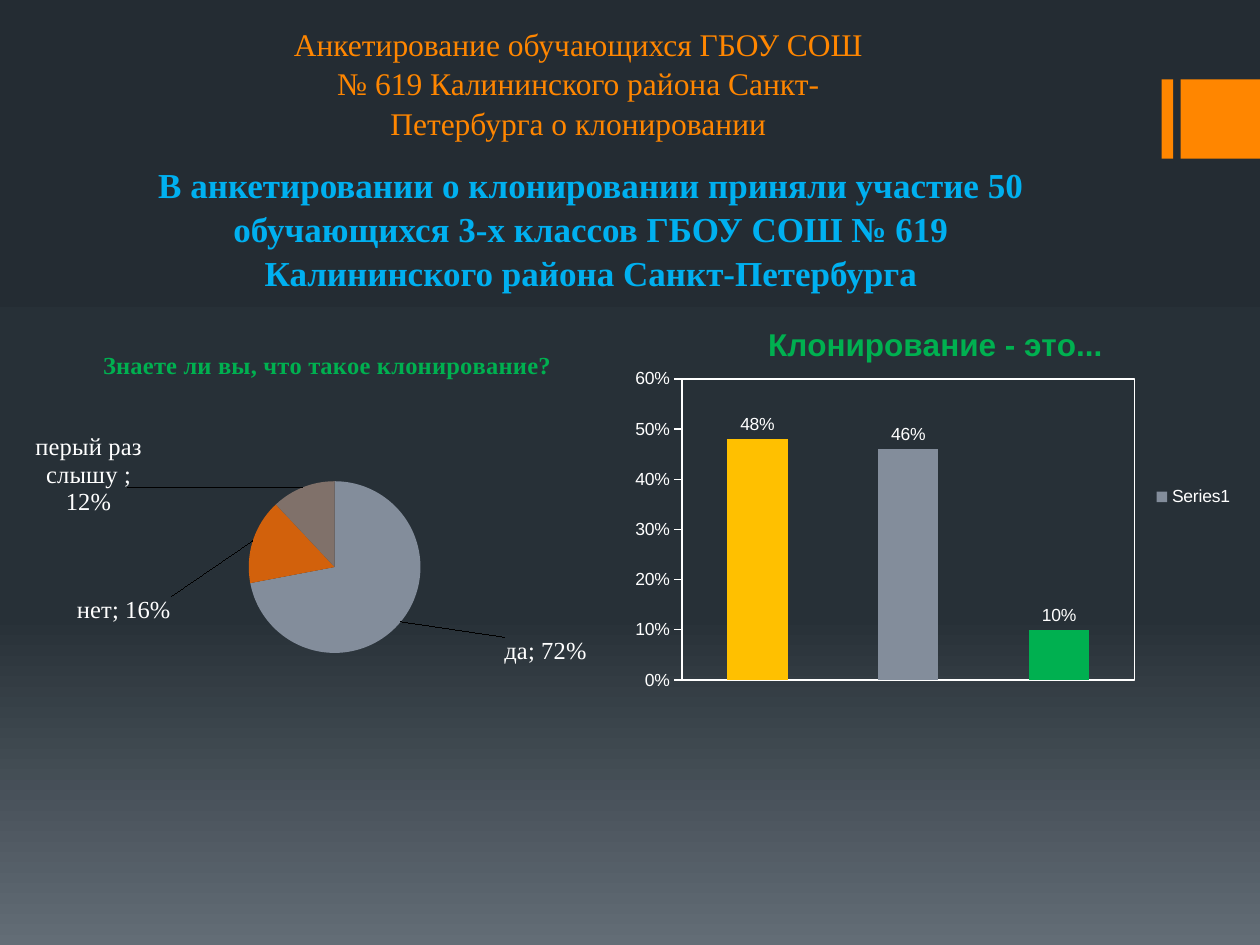
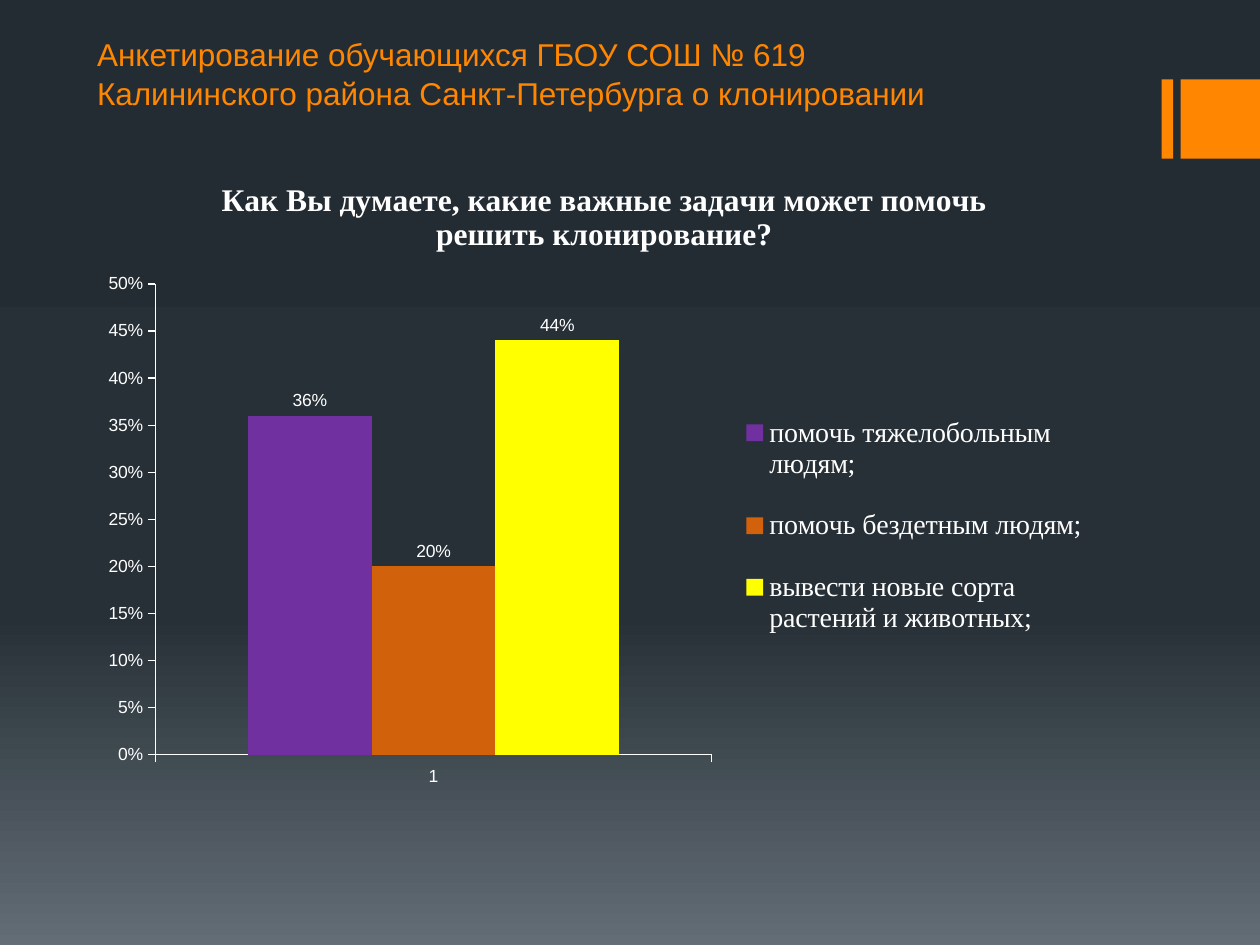
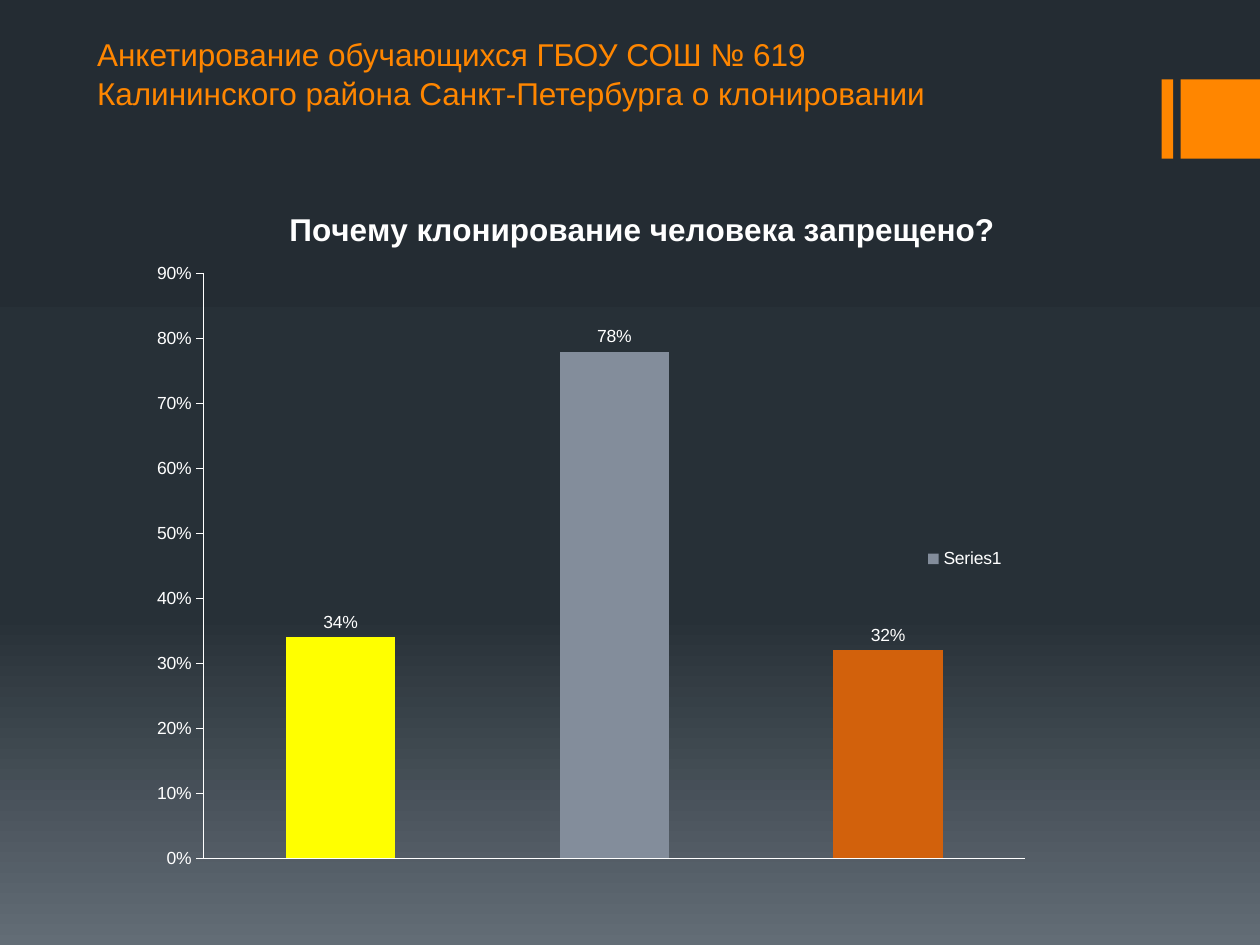
"""Build three slides presenting a school survey about cloning."""
from copy import deepcopy

from pptx import Presentation
from pptx.chart.data import CategoryChartData
from pptx.dml.color import RGBColor
from pptx.enum.chart import XL_CHART_TYPE, XL_LABEL_POSITION, XL_LEGEND_POSITION, XL_TICK_LABEL_POSITION, XL_TICK_MARK
from pptx.enum.shapes import MSO_SHAPE
from pptx.enum.text import MSO_ANCHOR, MSO_AUTO_SIZE, PP_ALIGN
from pptx.oxml import parse_xml
from pptx.oxml.ns import nsdecls
from pptx.util import Inches, Pt

SANS, SERIF = "Arial", "Times New Roman"
WHITE, ORANGE, SKY, GREEN = "FFFFFF", "FF8600", "00B0F0", "00B050"
GREY, RUST, TAUPE, YELLOW = "838D9B", "D2610C", "80716A", "FFFF00"
TITLE = "Анкетирование обучающихся ГБОУ СОШ № 619 Калининского района Санкт-Петербурга о клонировании"


def style(target, color, size=None, name=None, bold=None):
    """Colour a fill, or a font together with its size, typeface and weight."""
    if size is None:
        target.solid()
        target.fore_color.rgb = RGBColor.from_string(color)
    else:
        target.color.rgb = RGBColor.from_string(color)
        target.size, target.name, target.bold = Pt(size), name, bold


def place(element, index, offsets):
    """Give a chart part a manual layout as fractions of the chart."""
    for layout in element.xpath("c:layout"):
        element.remove(layout)
    modes = '<c:xMode val="edge"/><c:yMode val="edge"/>' if element.tag.split("}")[1] != "dLbl" else ""
    target = '<c:layoutTarget val="inner"/>' if element.tag.endswith("plotArea") else ""
    values = "".join(f'<c:{key} val="{value}"/>' for key, value in zip("xywh", offsets))
    element.insert(index, parse_xml(
        f'<c:layout {nsdecls("c")}><c:manualLayout>{target}{modes}{values}</c:manualLayout></c:layout>'))


presentation = Presentation()
presentation.slide_width, presentation.slide_height = Inches(10), Inches(7.5)
master = presentation.slide_master
background = master.background.fill
background.gradient()
background.gradient_angle = 270
first_stop = master.element.xpath("p:cSld/p:bg//a:gs")[0]
first_stop.addnext(deepcopy(first_stop))
for stop, (position, color) in zip(background.gradient_stops, [(0, "242C33"), (0.65, "273037"), (1, "636D76")]):
    stop.position = position
    stop.color.rgb = RGBColor.from_string(color)

slides = []
for left, top, width, height, font_name, alignment in [
    (2.09, 0.13, 5, 1.01, SERIF, PP_ALIGN.CENTER),
    (0.67, 0.21, 7.32, 0.71, SANS, PP_ALIGN.LEFT),
    (0.67, 0.21, 7.32, 0.71, SANS, PP_ALIGN.LEFT),
]:
    slide = presentation.slides.add_slide(presentation.slide_layouts[5])
    slides.append(slide)
    title = slide.shapes.title
    title.left, title.top, title.width, title.height = map(Inches, (left, top, width, height))
    frame = title.text_frame
    frame.word_wrap, frame.auto_size, frame.vertical_anchor = True, MSO_AUTO_SIZE.NONE, MSO_ANCHOR.TOP
    paragraph = frame.paragraphs[0]
    paragraph.alignment, paragraph.line_spacing = alignment, 1.05
    run = paragraph.add_run()
    run.text = TITLE
    style(run.font, ORANGE, 18, font_name)

for left, width in [(9.22, 0.09), (9.37, 0.63)]:
    band = slides[0].shapes.add_shape(MSO_SHAPE.RECTANGLE, Inches(left), Inches(0.63), Inches(width), Inches(0.63))
    band.shadow.inherit = False
    style(band.fill, ORANGE)
    band.line.fill.background()
    master.element.xpath("p:cSld/p:spTree")[0].append(band.element)

summary = slides[0].shapes.add_textbox(Inches(0.83), Inches(1.23), Inches(7.72), Inches(1.11)).text_frame
summary.word_wrap = True
for index, text in enumerate([
    "В анкетировании о клонировании приняли участие 50",
    "обучающихся 3-х классов ГБОУ СОШ № 619 Калининского района Санкт-Петербурга",
]):
    paragraph = summary.add_paragraph() if index else summary.paragraphs[0]
    paragraph.alignment, paragraph.line_spacing = PP_ALIGN.CENTER, 1.05
    run = paragraph.add_run()
    run.text = text
    style(run.font, SKY, 20, SERIF, True)

PIE, COLUMN = XL_CHART_TYPE.PIE, XL_CHART_TYPE.COLUMN_CLUSTERED
charts = []
for slide, kind, box, categories, series_list, colors, heading, heading_font, heading_at, plot_at in [
    (slides[0], PIE, (0.28, 2.57, 4.57, 2.84), ["да", "нет", "перый раз слышу "],
     [("Series 1", [0.72, 0.16, 0.12])], [GREY, RUST, TAUPE],
     "Знаете ли вы, что такое клонирование?", (GREEN, 14, SERIF, True), (0.11, 0.06), (0.37, 0.44, 0.3, 0.48)),
    (slides[0], COLUMN, (4.92, 2.33, 4.92, 3.23), ["1", "2", "3"],
     [("Series1", [0.48, 0.46, 0.1])], ["FFC000", GREY, GREEN],
     "Клонирование - это...", (GREEN, 18, SANS, True), (0.23, 0.06), (0.1, 0.21, 0.73, 0.74)),
    (slides[1], COLUMN, (0.67, 1.23, 8.03, 5.12), ["1"],
     [("помочь тяжелобольным людям;", [0.36]), ("помочь бездетным людям;", [0.2]),
      ("вывести новые сорта растений и животных;", [0.44])], ["7030A0", RUST, YELLOW],
     "Как Вы думаете, какие важные задачи может помочь решить клонирование?",
     (WHITE, 18, SERIF, True), (0.13, 0.03), (0.07, 0.2, 0.55, 0.73)),
    (slides[2], COLUMN, (1.06, 1.39, 7.95, 5.59), ["1", "2", "3"],
     [("Series1", [0.34, 0.78, 0.32])], [YELLOW, GREY, RUST],
     "Почему клонирование человека запрещено?", (WHITE, 18, SANS, True), (0.15, 0.04), (0.07, 0.14, 0.82, 0.83)),
]:
    data = CategoryChartData(number_format="0%")
    data.categories = categories
    for name, values in series_list:
        data.add_series(name, values)
    chart = slide.shapes.add_chart(kind, *map(Inches, box), data).chart
    charts.append(chart)
    style(chart.font, WHITE, 10, SANS)
    chart.has_title = True
    run = chart.chart_title.text_frame.paragraphs[0].add_run()
    run.text = heading
    style(run.font, *heading_font)
    place(chart.chart_title.element if hasattr(chart.chart_title, "element")
          else chart.element.xpath("c:chart/c:title")[0], 1, heading_at)
    place(chart.element.xpath("c:chart/c:plotArea")[0], 0, plot_at)
    chart.has_legend = False
    plot = chart.plots[0]
    plot.vary_by_categories = kind == PIE
    for index, series in enumerate(plot.series):
        style(series.format.fill, colors[index] if len(series_list) > 1 else GREY)
        if len(series_list) == 1:
            for point_index, color in enumerate(colors):
                if color != GREY or kind == PIE:
                    style(series.points[point_index].format.fill, color)
        labels = series.data_labels
        labels.show_value = True
        labels.number_format, labels.number_format_is_linked = "0%", False
        labels.position = XL_LABEL_POSITION.OUTSIDE_END
        style(labels.font, WHITE, *((14, SERIF) if kind == PIE else (10, SANS)))

pie_chart, meaning_chart, tasks_chart, ban_chart = charts
pie_series = pie_chart.plots[0].series[0]
pie_series.data_labels.show_category_name = True
for index, offset in enumerate([(0.17, 0.03), (-0.13, 0.24), (-0.3, 0.1)]):
    label = pie_series.points[index].data_label
    label.position = XL_LABEL_POSITION.OUTSIDE_END
    style(label.font, WHITE, 14, SERIF)
for element, offset in zip(pie_chart.element.xpath("//c:dLbl"), [(0.17, 0.03), (-0.13, 0.24), (-0.3, 0.1)]):
    place(element, 1, offset)
    element.insert(2, parse_xml(f'<c:numFmt {nsdecls("c")} formatCode="0%" sourceLinked="0"/>'))
    element.xpath("c:showCatName")[0].set("val", "1")
    element.append(parse_xml(f'<c:separator {nsdecls("c")}>; </c:separator>'))

for chart, maximum, unit, legend_at, legend_font in [
    (meaning_chart, 0.6, 0.1, (0.85, 0.47, 0.15, 0.06), (10, SANS)),
    (tasks_chart, 0.5, 0.05, (0.64, 0.36, 0.36, 0.43), (16, SERIF)),
    (ban_chart, 0.9, 0.1, (0.78, 0.52, 0.1, 0.05), (10, SANS)),
]:
    chart.plots[0].gap_width = 150
    value_axis, category_axis = chart.value_axis, chart.category_axis
    value_axis.minimum_scale, value_axis.maximum_scale, value_axis.major_unit = 0, maximum, unit
    value_axis.has_major_gridlines = False
    value_axis.tick_labels.number_format, value_axis.tick_labels.number_format_is_linked = "0%", False
    for axis in (value_axis, category_axis):
        axis.major_tick_mark, axis.minor_tick_mark = XL_TICK_MARK.OUTSIDE, XL_TICK_MARK.NONE
        style(axis.format.line.fill, WHITE)
        axis.format.line.width = Pt(0.75)
    chart.has_legend = True
    chart.legend.position, chart.legend.include_in_layout = XL_LEGEND_POSITION.RIGHT, False
    style(chart.legend.font, WHITE, *legend_font)
    place(chart.element.xpath("c:chart/c:legend")[0], 1, legend_at)

meaning_chart.category_axis.visible = False
meaning_chart.element.xpath("c:chart/c:plotArea")[0].append(parse_xml(
    f'<c:spPr {nsdecls("c", "a")}><a:noFill/><a:ln w="9525"><a:solidFill><a:srgbClr val="{WHITE}"/>'
    '</a:solidFill></a:ln></c:spPr>'))
ban_chart.category_axis.major_tick_mark = XL_TICK_MARK.NONE
ban_chart.category_axis.tick_label_position = XL_TICK_LABEL_POSITION.NONE

presentation.save("out.pptx")
